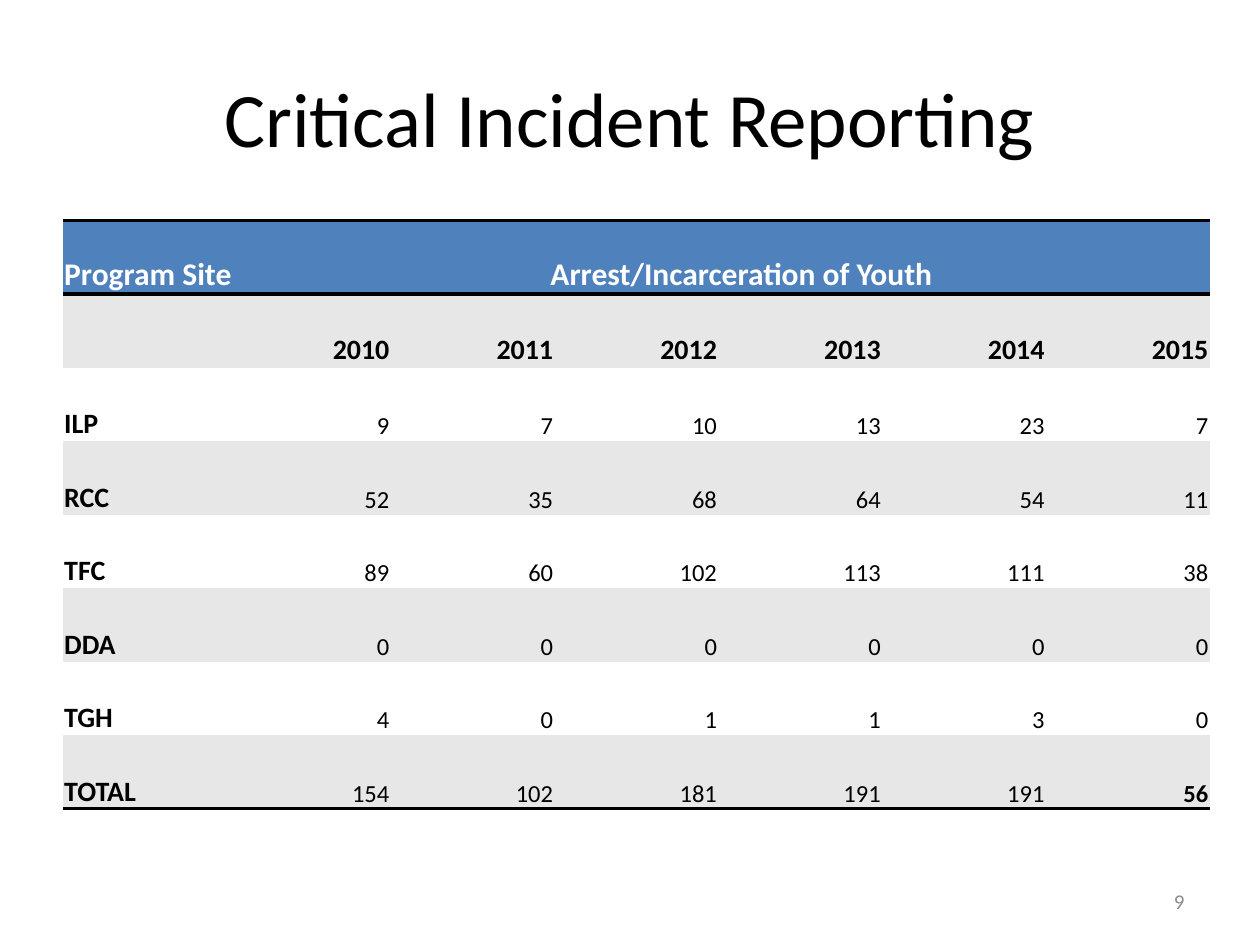
import pptx
import pptx.dml.color
import pptx.enum.text
import pptx.oxml
import pptx.oxml.ns
import pptx.util

Inches = pptx.util.Inches
RGBColor = pptx.dml.color.RGBColor
ALIGN = pptx.enum.text.PP_ALIGN
ANCHOR = pptx.enum.text.MSO_ANCHOR

BLACK = RGBColor(0x00, 0x00, 0x00)
WHITE = RGBColor(0xFF, 0xFF, 0xFF)
BLUE = RGBColor(0x4F, 0x81, 0xBD)
BAND = RGBColor(0xE7, 0xE7, 0xE7)
GREY = RGBColor(0x8C, 0x8C, 0x8C)
PLAIN_TABLE_STYLE = "{2D5ABB26-0587-4C30-8999-92F81FD0307C}"


def write(frame, text, align, size, color, bold=False):
    para = frame.paragraphs[0]
    para.alignment = align
    span = para.add_run()
    span.text = text
    span.font.color.rgb = color
    formats = {"name": "Calibri", "size": pptx.util.Pt(size), "bold": bold}
    for name, value in formats.items():
        setattr(span.font, name, value)


def add_rules(cell, sides):
    properties = cell._tc.get_or_add_tcPr()
    for position, side in enumerate(sides):
        line = pptx.oxml.parse_xml(
            f'<a:ln{side} {pptx.oxml.ns.nsdecls("a")} w="{pptx.util.Pt(2)}">'
            f'<a:solidFill><a:srgbClr val="{BLACK}"/></a:solidFill></a:ln{side}>')
        properties.insert(position, line)


deck = pptx.Presentation()
deck.slide_width, deck.slide_height = Inches(10), Inches(7.5)
page = deck.slides.add_slide(deck.slide_layouts[6])

# Title and page number
labels = [
    ((0.5, 0.3, 9, 1.25), "Critical Incident Reporting", ALIGN.CENTER, 44, BLACK),
    ((7.17, 6.95, 2.33, 0.4), "9", ALIGN.RIGHT, 12, GREY),
]
for place, text, align, size, color in labels:
    box = page.shapes.add_textbox(*map(Inches, place))
    box.text_frame.word_wrap = True
    box.text_frame.vertical_anchor = ANCHOR.MIDDLE
    write(box.text_frame, text, align, size, color)

# Incident table
rows = [
    ["Program Site", "Arrest/Incarceration of Youth", "", "", "", "", ""],
    ["", "2010", "2011", "2012", "2013", "2014", "2015"],
    ["ILP", "9", "7", "10", "13", "23", "7"],
    ["RCC", "52", "35", "68", "64", "54", "11"],
    ["TFC", "89", "60", "102", "113", "111", "38"],
    ["DDA", "0", "0", "0", "0", "0", "0"],
    ["TGH", "4", "0", "1", "1", "3", "0"],
    ["TOTAL", "154", "102", "181", "191", "191", "56"],
]
widths = [1.67, 0.93] + [1.3] * 5
last_row, last_column = len(rows) - 1, len(widths) - 1
frame = page.shapes.add_table(len(rows), len(widths), Inches(0.5), Inches(1.75),
                              Inches(sum(widths)), Inches(4.67))
table = frame.table
table.first_row = table.horz_banding = False
table._tbl.tblPr.find(pptx.oxml.ns.qn("a:tableStyleId")).text = PLAIN_TABLE_STYLE
for column, width in zip(table.columns, widths):
    column.width = Inches(width)
table.cell(0, 1).merge(table.cell(0, last_column))

cell_format = {
    "vertical_anchor": ANCHOR.BOTTOM,
    "margin_left": Inches(0.01),
    "margin_top": Inches(0.01),
    "margin_right": Inches(0.01),
    "margin_bottom": 0,
}
for r, row in enumerate(rows):
    for c, text in enumerate(row):
        cell = table.cell(r, c)
        for name, value in cell_format.items():
            setattr(cell, name, value)
        cell.fill.solid()
        cell.fill.fore_color.rgb = BLUE if r == 0 else BAND if r % 2 else WHITE

        # Heavy rules around the header and under the totals
        if r == 0:
            add_rules(cell, "TB")
        elif r == last_row:
            add_rules(cell, "B")

        if text:
            heading = r < 2 or c == 0
            align = ALIGN.LEFT if c == 0 else ALIGN.CENTER if r == 0 else ALIGN.RIGHT
            size = 18 if r == 0 else 16 if heading else 14
            bold = heading or (r, c) == (last_row, last_column)
            write(cell.text_frame, text, align, size, WHITE if r == 0 else BLACK, bold)

deck.save("out.pptx")
